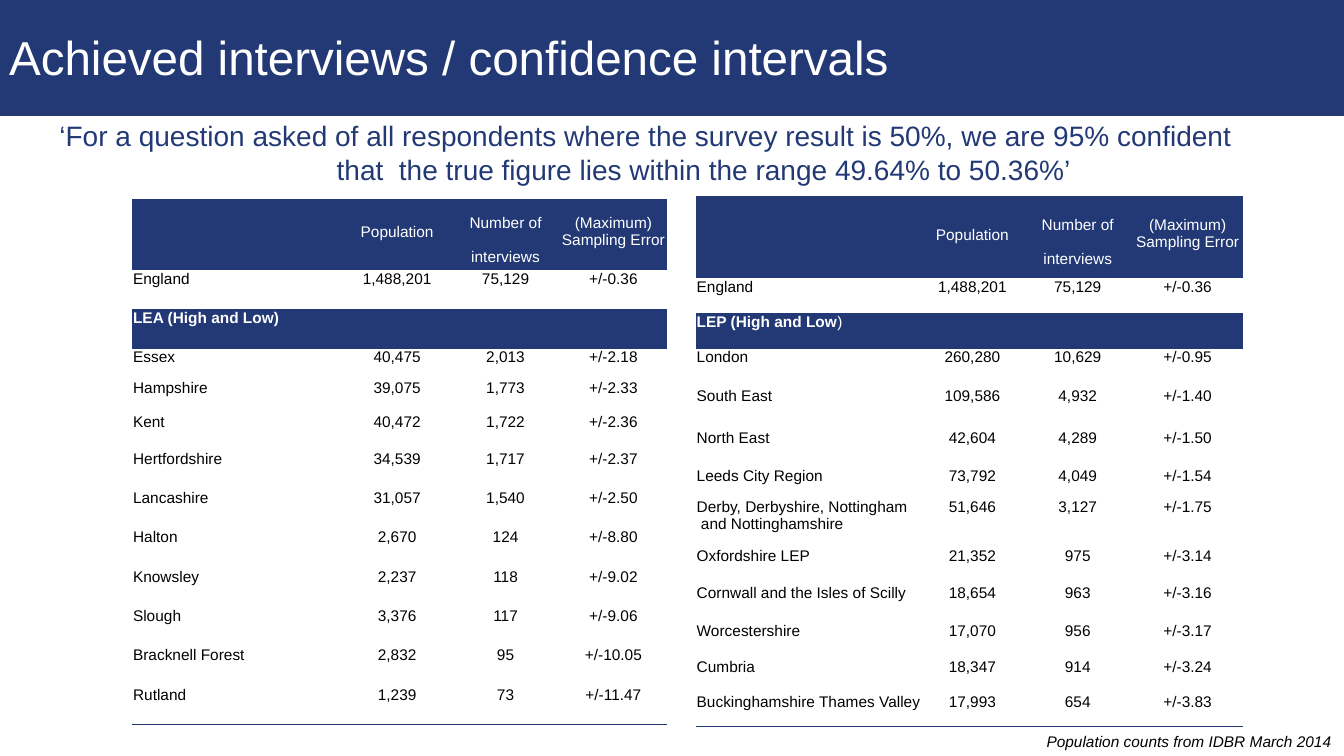
"""Build the slide on achieved interviews and confidence intervals."""
from lxml import etree
from pptx import Presentation
from pptx.dml.color import RGBColor
from pptx.enum import shapes, text
from pptx.oxml.ns import qn
from pptx.util import Inches, Pt

NAVY = RGBColor(0x22, 0x39, 0x75)
WHITE = RGBColor(0xFF, 0xFF, 0xFF)
BLACK = RGBColor(0x00, 0x00, 0x00)
NO_STYLE = "{2D5ABB26-0587-4C30-8999-92F81FD0307C}"
HEADINGS = ["", "Population", "Number of\ninterviews", "(Maximum)\vSampling Error"]
ENGLAND = ["England", "1,488,201", "75,129", "+/-0.36"]

TABLES = [
    {
        "place": (1.31, 1.97),
        "columns": [1.7, 1.47, 0.99, 1.15],
        "heights": [0.71, 0.39, 0.39, 0.31, 0.33, 0.37] + [0.39] * 6 + [0.38],
        "margins": [(0.01, 0), (0.39, 0), (0.08, 0), (0.08, 0)],
        "heading_tops": [0, 0.25, 0.16, 0.16],
        "rows": [
            HEADINGS,
            ENGLAND,
            ["LEA (High and Low)", "", "", ""],
            ["Essex", "40,475", "2,013", "+/-2.18"],
            ["Hampshire", "39,075", "1,773", "+/-2.33"],
            ["Kent", "40,472", "1,722", "+/-2.36"],
            ["Hertfordshire", "34,539", "1,717", "+/-2.37"],
            ["Lancashire", "31,057", "1,540", "+/-2.50"],
            ["Halton", "2,670", "124", "+/-8.80"],
            ["Knowsley", "2,237", "118", "+/-9.02"],
            ["Slough", "3,376", "117", "+/-9.06"],
            ["Bracknell Forest", "2,832", "95", "+/-10.05"],
            ["Rutland", "1,239", "73", "+/-11.47"],
        ],
    },
    {
        "place": (6.9, 1.94),
        "columns": [2.32, 0.95, 0.99, 1.17],
        "heights": [0.82, 0.35, 0.35, 0.39, 0.41, 0.38, 0.31, 0.48, 0.37, 0.38, 0.35, 0.35, 0.33],
        "margins": [(0.01, 0), (0, 0.1), (0.05, 0), (0.07, 0)],
        "heading_tops": [0, 0.31, 0.21, 0.21],
        "rows": [
            HEADINGS,
            ENGLAND,
            ["LEP (High and Low)", "", "", ""],
            ["London", "260,280", "10,629", "+/-0.95"],
            ["South East", "109,586", "4,932", "+/-1.40"],
            ["North East", "42,604", "4,289", "+/-1.50"],
            ["Leeds City Region", "73,792", "4,049", "+/-1.54"],
            ["Derby, Derbyshire, Nottingham\v and Nottinghamshire", "51,646", "3,127", "+/-1.75"],
            ["Oxfordshire LEP", "21,352", "975", "+/-3.14"],
            ["Cornwall and the Isles of Scilly", "18,654", "963", "+/-3.16"],
            ["Worcestershire", "17,070", "956", "+/-3.17"],
            ["Cumbria", "18,347", "914", "+/-3.24"],
            ["Buckinghamshire Thames Valley", "17,993", "654", "+/-3.83"],
        ],
    },
]


def write(frame, words, size, color, align=text.PP_ALIGN.LEFT):
    frame.text = words
    frame.word_wrap = True
    for para in frame.paragraphs:
        para.alignment = align
        para.font.name = "Arial"
        para.font.size = Pt(size)
        para.font.color.rgb = color
    return frame.paragraphs[0]


def place_text(shape, left, top, width, height, inset_top=0):
    shape.left, shape.top = Inches(left), Inches(top)
    shape.width, shape.height = Inches(width), Inches(height)
    frame = shape.text_frame
    frame.margin_left = frame.margin_right = frame.margin_bottom = 0
    frame.margin_top = Inches(inset_top)
    frame.vertical_anchor = text.MSO_ANCHOR.TOP
    frame.auto_size = text.MSO_AUTO_SIZE.NONE
    return frame


deck = Presentation()
deck.slide_width, deck.slide_height = Inches(13.33), Inches(7.5)
page = deck.slides.add_slide(deck.slide_layouts[5])

band = page.shapes.add_shape(shapes.MSO_SHAPE.RECTANGLE, 0, 0, deck.slide_width, Inches(1.15))
band.shadow.inherit = False
band.fill.solid()
band.fill.fore_color.rgb = NAVY
band.line.fill.background()
page.shapes._spTree.insert(2, band._element)

title = place_text(page.shapes.title, 0.09, 0.04, 13.16, 1.04, 0.24)
write(title, "Achieved interviews / confidence intervals", 34, WHITE)

quote = place_text(page.shapes.add_textbox(0, 0, 0, 0), 0.58, 1.18, 12.1, 0.68)
quote_para = write(
    quote,
    "‘For a question asked of all respondents where the survey result is 50%, we are 95% confident "
    "that  the true figure lies within the range 49.64% to 50.36%’",
    20, NAVY)
quote_properties = quote_para._p.get_or_add_pPr()
quote_properties.set("marL", str(Inches(2.76)))
quote_properties.set("indent", str(Inches(-2.75)))

for spec_table in TABLES:
    rows, columns = spec_table["rows"], spec_table["columns"]
    left, top = spec_table["place"]
    table = page.shapes.add_table(
        len(rows), len(columns), Inches(left), Inches(top),
        Inches(sum(columns)), Inches(sum(spec_table["heights"]))).table
    table.first_row = table.horz_banding = False
    table._tbl.tblPr.find(qn("a:tableStyleId")).text = NO_STYLE
    for column, width in zip(table.columns, columns):
        column.width = Inches(width)
    for row_index, row in enumerate(rows):
        table.rows[row_index].height = Inches(spec_table["heights"][row_index])
        filled = row_index in (0, 2)
        for column_index, words in enumerate(row):
            cell = table.cell(row_index, column_index)
            margin_left, margin_right = spec_table["margins"][column_index]
            cell.margin_left, cell.margin_right = Inches(margin_left), Inches(margin_right)
            cell.margin_top = cell.margin_bottom = 0
            align = text.PP_ALIGN.CENTER if column_index else text.PP_ALIGN.LEFT
            para = write(cell.text_frame, words, 11, WHITE if filled else BLACK, align)
            para.font.bold = row_index == 2
            if filled:
                cell.fill.solid()
                cell.fill.fore_color.rgb = NAVY
            else:
                cell.fill.background()
            if row_index == 0:
                cell.margin_top = Inches(spec_table["heading_tops"][column_index])
                for later_para in cell.text_frame.paragraphs[1:]:
                    later_para.space_before = Pt(12)
            if row_index == len(rows) - 1:
                border = etree.Element(qn("a:lnB"), w=str(Pt(1)))
                border_fill = etree.SubElement(border, qn("a:solidFill"))
                etree.SubElement(border_fill, qn("a:srgbClr"), val=str(NAVY))
                cell._tc.get_or_add_tcPr().insert(0, border)

lep_para = table.cell(2, 0).text_frame.paragraphs[0]
lep_para.runs[0].text = "LEP (High and Low"
closing_span = lep_para.add_run()
closing_span.text = ")"
closing_span.font.bold = False

source_note = place_text(page.shapes.add_textbox(0, 0, 0, 0), 10.38, 7.26, 2.9, 0.2)
write(source_note, "Population counts from IDBR March 2014", 11, BLACK).font.italic = True

deck.save("out.pptx")
